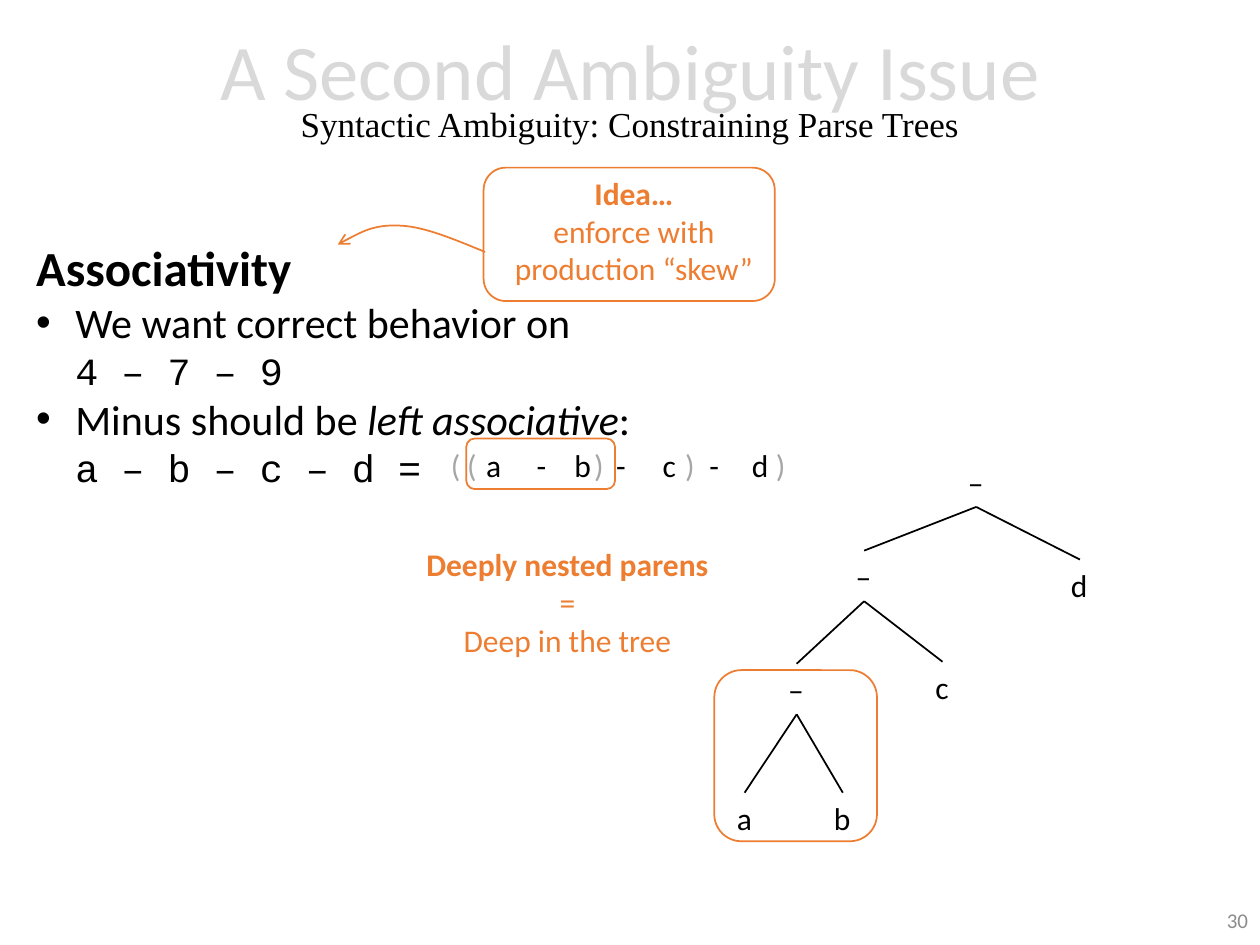
from dataclasses import dataclass
from typing import Optional

from lxml.etree import SubElement
from pptx import Presentation
from pptx.dml.color import RGBColor
from pptx.enum.shapes import MSO_CONNECTOR as Connector, MSO_SHAPE as Preset
from pptx.enum.text import MSO_ANCHOR as Anchor, MSO_AUTO_SIZE as AutoSize, PP_ALIGN as Align
from pptx.oxml.ns import qn
from pptx.util import Cm, Pt

COLORS = {"black": "000000", "white": "FFFFFF", "orange": "ED7D31",
          "title": "D9D9D9", "paren": "A6A6A6", "number": "8C8C8C"}
CHARACTER_WIDTHS = {"a": 0.81, "b": 0.86, "c": 0.79, "d": 0.86, "–": 0.84}
LINE_HEIGHT = 1.02
INDENT = 0.79


@dataclass
class Run:
    text: str
    size: float = 18
    font: str = "Calibri"
    color: str = "black"
    bold: bool = False
    italic: bool = False


@dataclass
class Line:
    runs: list[Run]
    bullet: bool = False
    break_before: Optional[int] = None


@dataclass
class Box:
    left: float
    top: float
    width: float
    height: float

    def lengths(self) -> list:
        return [Cm(value) for value in (self.left, self.top, self.width, self.height)]


@dataclass
class Node:
    label: str
    center: float
    top: float
    children: tuple = ()


def rgb(name: str) -> RGBColor:
    return RGBColor.from_string(COLORS[name])


def add_text(slide, box: Box, lines: list[Line], align=Align.LEFT, anchor=Anchor.TOP,
             wrap: bool = True, grow: bool = False, spacing: Optional[float] = None):
    shape = slide.shapes.add_textbox(*box.lengths())
    frame = shape.text_frame
    frame.word_wrap = wrap
    frame.vertical_anchor = anchor
    frame.auto_size = AutoSize.SHAPE_TO_FIT_TEXT if grow else AutoSize.NONE
    for index, line in enumerate(lines):
        paragraph = frame.add_paragraph() if index else frame.paragraphs[0]
        paragraph.alignment = align
        if spacing:
            paragraph.line_spacing = spacing
        if line.bullet:
            properties = paragraph._p.get_or_add_pPr()
            properties.set("marL", str(Cm(INDENT)))
            properties.set("indent", str(-Cm(INDENT)))
            SubElement(properties, qn("a:buFont"), typeface="Arial")
            SubElement(properties, qn("a:buChar"), char="•")
        for position, item in enumerate(line.runs):
            if position == line.break_before:
                paragraph.add_line_break()
            run = paragraph.add_run()
            run.text = item.text
            run.font.size = Pt(item.size)
            run.font.name = item.font
            run.font.bold = item.bold
            run.font.italic = item.italic
            run.font.color.rgb = rgb(item.color)
    return shape


def add_label(slide, text: str, left: float, top: float, color: str = "black"):
    box = Box(left, top, CHARACTER_WIDTHS.get(text, 0.71), LINE_HEIGHT)
    return add_text(slide, box, [Line([Run(text, color=color)])], wrap=False, grow=True)


def add_note(slide, box: Box, heading: str, *details: str) -> None:
    lines = [Line([Run(heading, color="orange", bold=True)])]
    lines += [Line([Run(detail, color="orange")]) for detail in details]
    add_text(slide, box, lines, align=Align.CENTER, wrap=False, grow=True)


def add_frame(slide, box: Box, fill: Optional[str] = None) -> None:
    shape = slide.shapes.add_shape(Preset.ROUNDED_RECTANGLE, *box.lengths())
    shape.shadow.inherit = False
    if fill:
        shape.fill.solid()
        shape.fill.fore_color.rgb = rgb(fill)
    else:
        shape.fill.background()
    shape.line.color.rgb = rgb("orange")
    shape.line.width = Pt(1)


def add_curved_arrow(slide, points: list[tuple[float, float]]) -> None:
    start, *rest = [(Cm(x), Cm(y)) for x, y in points]
    builder = slide.shapes.build_freeform(*start)
    builder.add_line_segments(rest, close=False)
    shape = builder.convert_to_shape()
    shape.shadow.inherit = False
    shape.fill.background()
    shape.line.color.rgb = rgb("orange")
    shape.line.width = Pt(1)
    SubElement(shape.line._get_or_add_ln(), qn("a:tailEnd"), type="arrow")
    outline = next(shape._element.iter(qn("a:path")))
    segments = outline.findall(qn("a:lnTo"))
    for first in range(0, len(segments), 3):
        curve = SubElement(outline, qn("a:cubicBezTo"))
        for segment in segments[first:first + 3]:
            curve.append(segment[0])
            outline.remove(segment)


def add_tree(slide, node: Node):
    left = node.center - CHARACTER_WIDTHS[node.label] / 2
    parent = add_label(slide, node.label, left, node.top)
    for child_node in node.children:
        child = add_tree(slide, child_node)
        edge = slide.shapes.add_connector(Connector.STRAIGHT, 0, 0, 0, 0)
        edge.begin_connect(parent, 2)
        edge.end_connect(child, 0)
        edge.line.color.rgb = rgb("black")
        edge.line.width = Pt(1)
        SubElement(edge._element.spPr, qn("a:effectLst"))
    return parent


def main() -> None:
    presentation = Presentation()
    presentation.slide_width = Cm(25.4)
    presentation.slide_height = Cm(19.05)
    slide = presentation.slides.add_slide(presentation.slide_layouts[6])

    add_text(slide, Box(19.69, 18.03, 5.72, LINE_HEIGHT),
             [Line([Run("30", 12, color="number")])], align=Align.RIGHT, anchor=Anchor.MIDDLE)
    add_text(slide, Box(0, 0.08, 25.4, 3.68), [
        Line([Run("A Second Ambiguity Issue", 45, color="title")]),
        Line([Run("Syntactic Ambiguity: Constraining Parse Trees", 20, "Times New Roman")]),
    ], align=Align.CENTER, anchor=Anchor.MIDDLE, spacing=0.7)

    add_frame(slide, Box(9.75, 3.38, 5.87, 2.69), fill="white")
    add_note(slide, Box(9.73, 3.38, 6.1, 2.57), "Idea…", "enforce with", "production “skew”")
    add_curved_arrow(slide, [(9.78, 5.08), (9.17, 4.83), (8.56, 4.57), (8.08, 4.55),
                             (7.57, 4.52), (7.19, 4.72), (6.81, 4.93)])

    add_text(slide, Box(0.48, 4.67, 12.7, 6.15), [
        Line([Run("Associativity", 28, bold=True)]),
        Line([Run("We want correct behavior on", 24), Run("4 – 7 – 9", 22, "Courier New")],
             bullet=True, break_before=1),
        Line([Run("Minus should be ", 24), Run("left associative", 24, italic=True),
              Run(": ", 24), Run("a – b – c – d =", 22, "Courier New")], bullet=True),
    ], grow=True)

    formula = "((a-b)-c)-d)"
    formula_lefts = (8.84, 9.17, 9.55, 10.57, 11.33, 11.73,
                     12.17, 13.11, 13.56, 14.05, 14.91, 15.39)
    for symbol, left in zip(formula, formula_lefts):
        add_label(slide, symbol, left, 8.86, "paren" if symbol in "()" else "black")

    innermost = Node("–", 16.06, 13.38, (Node("a", 15.01, 15.98), Node("b", 16.99, 15.98)))
    middle = Node("–", 17.42, 11.1, (innermost, Node("c", 19, 13.34)))
    add_tree(slide, Node("–", 19.68, 9.2, (middle, Node("d", 21.77, 11.28))))

    add_frame(slide, Box(14.4, 13.51, 3.28, 3.45))
    add_note(slide, Box(8.05, 10.87, 6.78, 2.57),
             "Deeply nested parens", "=", "Deep in the tree")
    add_frame(slide, Box(9.4, 8.84, 3, LINE_HEIGHT))

    presentation.save("out.pptx")


if __name__ == "__main__":
    main()
